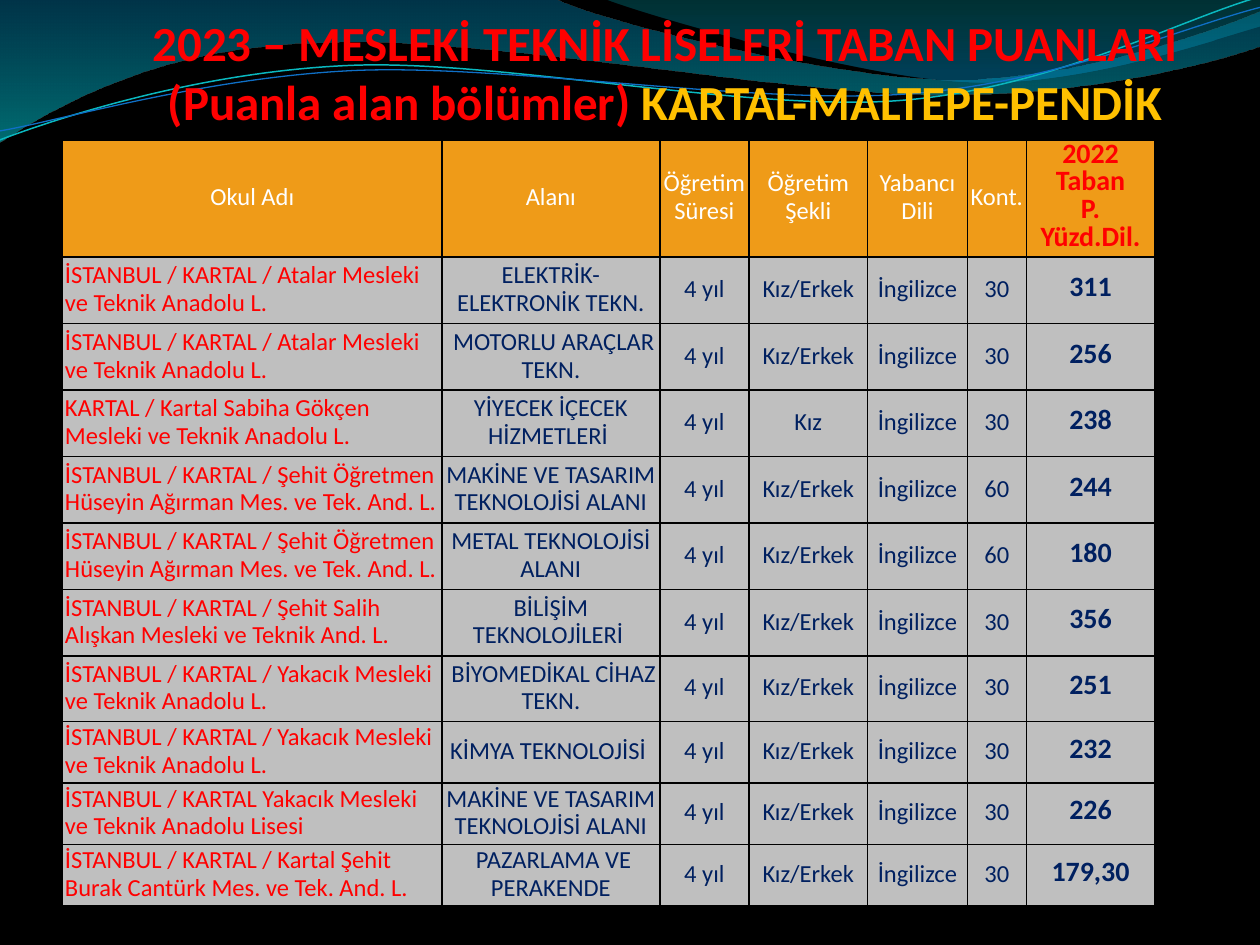
from dataclasses import dataclass
from typing import NamedTuple

from lxml import etree
from pptx import Presentation
from pptx import util as u
from pptx.dml.color import RGBColor
from pptx.enum import text as t
from pptx.oxml import ns

Cm, Pt = u.Cm, u.Pt
LEFT, MID = t.PP_ALIGN.LEFT, t.PP_ALIGN.CENTER


@dataclass(frozen=True)
class Theme:
    font: str = "Calibri"
    back: str = "000000"
    red: str = "FF0000"
    gold: str = "FFC000"
    navy: str = "002060"
    white: str = "FFFFFF"
    head: str = "EF9B18"
    body: str = "BFBFBF"
    title: int = 28
    cell: int = 14
    score: int = 16
    lead: float = 15.9


class Stop(NamedTuple):
    pos: float
    color: str
    alpha: int


class Wave(NamedTuple):
    """Steps in cm: two numbers are a line, six are a curve."""
    start: tuple
    steps: list
    stops: tuple = ()
    line: str = ""
    width: float = 0


class Row(NamedTuple):
    school: str
    field: str
    score: str
    quota: str = "30"
    kind: str = "Kız/Erkek"


class Style(NamedTuple):
    color: str
    size: int
    bold: bool = False


TH = Theme()
WAVES = [
    Wave((0, -0.03), [
        (11.18, -0.03), (12.09, 0.43, 16.87, 1.6, 19.25, 1.6),
        (21.67, 1.6, 24.33, 0.66, 25.4, 0.23), (25.43, 0.91),
        (24.97, 1.12, 22.1, 1.93, 18.95, 1.91),
        (15.8, 1.91, 9.7, 0.71, 6.53, 0.86),
        (3.28, 0.89, 1.17, 2.11, -0.03, 2.87), (0, -0.03)],
        (Stop(0, "0074A1", 45), Stop(1, "00C6CF", 55))),
    Wave((12.17, -0.03), [
        (12.93, 0.28, 17.32, 1.57, 19.53, 1.65),
        (21.74, 1.75, 24.41, 0.81, 25.4, 0.53), (25.4, 0), (12.17, -0.03)],
        (Stop(0, "00A1A9", 30), Stop(0.8, "008BBF", 45))),
    Wave((0, 2.82), [
        (1.22, 2.36, 4.01, 1.45, 7.04, 1.32),
        (10.03, 1.19, 15.06, 2.26, 18.11, 2.03),
        (21.16, 1.8, 23.83, 0.38, 25.35, -0.05)], line="0AB8BF", width=0.85),
    Wave((0, 2.64), [
        (1.19, 2.44, 4.17, 1.55, 7.19, 1.42),
        (10.24, 1.3, 15.16, 2.11, 18.21, 1.9),
        (21.23, 1.7, 23.9, 0.53, 25.4, 0.15)], line="0F6FC6", width=0.75),
]
COLS = [7.65, 4.39, 1.8, 2.39, 2.01, 1.19, 2.59]
HIGHS = [2.36] + [1.34] * 6 + [1.32] + [1.24] * 3
HEADS = ["Okul Adı", "Alanı", "Öğretim Süresi", "Öğretim Şekli",
         "Yabancı Dili", "Kont."]
BASE = "2022\vTaban\vP.\vYüzd.Dil."
ATALAR = "İSTANBUL / KARTAL / Atalar Mesleki ve Teknik Anadolu L."
HUSEYIN = ("İSTANBUL / KARTAL / Şehit Öğretmen Hüseyin Ağırman "
           "Mes. ve Tek. And. L.")
YAKACIK = "İSTANBUL / KARTAL / Yakacık Mesleki ve Teknik Anadolu L."
MAKINE = "MAKİNE VE TASARIM TEKNOLOJİSİ ALANI"
ROWS = [
    Row(ATALAR, "ELEKTRİK-ELEKTRONİK TEKN.", "311"),
    Row(ATALAR, " MOTORLU ARAÇLAR TEKN.", "256"),
    Row("KARTAL / Kartal Sabiha Gökçen Mesleki ve Teknik Anadolu L.",
        "YİYECEK İÇECEK HİZMETLERİ ", "238", kind="Kız"),
    Row(HUSEYIN, MAKINE, "244", "60"),
    Row(HUSEYIN, "METAL TEKNOLOJİSİ ALANI", "180", "60"),
    Row("İSTANBUL / KARTAL / Şehit Salih Alışkan Mesleki ve Teknik And. L.",
        "BİLİŞİM TEKNOLOJİLERİ ", "356"),
    Row(YAKACIK, " BİYOMEDİKAL CİHAZ TEKN.", "251"),
    Row(YAKACIK, "KİMYA TEKNOLOJİSİ ", "232"),
    Row("İSTANBUL / KARTAL Yakacık Mesleki ve Teknik Anadolu Lisesi",
        MAKINE, "226"),
    Row("İSTANBUL / KARTAL / Kartal Şehit Burak Cantürk Mes. ve Tek. And. L.",
        " PAZARLAMA VE PERAKENDE", "179,30"),
]


def rgb(code: str) -> RGBColor:
    return RGBColor.from_string(code)


def bend(shape, steps: list) -> None:
    """Join each three line segments of a curved step into one Bézier."""
    lines = iter(list(shape._element.spPr.iter(ns.qn("a:lnTo"))))
    for step in steps:
        first = next(lines)
        if len(step) == 2:
            continue
        curve = etree.Element(ns.qn("a:cubicBezTo"))
        first.addprevious(curve)
        for seg in (first, next(lines), next(lines)):
            curve.append(seg[0])
            seg.getparent().remove(seg)


def draw_wave(slide, wave: Wave) -> None:
    pen = slide.shapes.build_freeform(*map(Cm, wave.start))
    pts = [(Cm(step[i]), Cm(step[i + 1]))
           for step in wave.steps for i in range(0, len(step), 2)]
    pen.add_line_segments(pts, close=bool(wave.stops))
    shape = pen.convert_to_shape()
    bend(shape, wave.steps)
    shape.shadow.inherit = False
    if not wave.stops:
        shape.fill.background()
        shape.line.color.rgb = rgb(wave.line)
        shape.line.width = Pt(wave.width)
        return
    shape.line.fill.background()
    shape.fill.gradient()
    shape.fill.gradient_angle = 270
    for slot, stop in zip(shape.fill.gradient_stops, wave.stops):
        slot.position = stop.pos
        slot.color.rgb = rgb(stop.color)
    marks = shape._element.spPr.iter(ns.qn("a:srgbClr"))
    for mark, stop in zip(list(marks), wave.stops):
        etree.SubElement(mark, ns.qn("a:alpha"), val=str(stop.alpha * 1000))


def draw_title(slide) -> None:
    box = slide.shapes.add_textbox(Cm(1.9), Cm(0.13), Cm(23.01), Cm(2.64))
    frame = box.text_frame
    frame.word_wrap = True
    lines = [
        [("2023 – MESLEKİ TEKNİK LİSELERİ TABAN PUANLARI", TH.red)],
        [("(Puanla alan bölümler) ", TH.red), ("KARTAL-MALTEPE-PENDİK", TH.gold)],
    ]
    for i, line in enumerate(lines):
        para = frame.add_paragraph() if i else frame.paragraphs[0]
        para.alignment = MID
        para.font.name, para.font.size, para.font.bold = TH.font, Pt(TH.title), True
        for words, color in line:
            run = para.add_run()
            run.text = words
            run.font.color.rgb = rgb(color)


def edge(cell) -> None:
    """Put a black one-point border on all four sides."""
    props = cell._tc.get_or_add_tcPr()
    for i, side in enumerate("LRTB"):
        line = etree.Element(ns.qn(f"a:ln{side}"), w=str(Pt(1)))
        fill = etree.SubElement(line, ns.qn("a:solidFill"))
        etree.SubElement(fill, ns.qn("a:srgbClr"), val=TH.back)
        props.insert(i, line)


def fill_cell(cell, words: str, style: Style, back: str, align=MID) -> None:
    cell.fill.solid()
    cell.fill.fore_color.rgb = rgb(back)
    edge(cell)
    cell.vertical_anchor = t.MSO_ANCHOR.MIDDLE
    cell.margin_left = cell.margin_right = Cm(0.05)
    cell.margin_top = cell.margin_bottom = Cm(0.05)
    para = cell.text_frame.paragraphs[0]
    para.text, para.alignment = words, align
    para.line_spacing = Pt(TH.lead)
    font = para.font
    font.name, font.size, font.bold = TH.font, Pt(style.size), style.bold
    font.color.rgb = rgb(style.color)


def draw_table(slide) -> None:
    table = slide.shapes.add_table(
        len(HIGHS), len(COLS), Cm(1.26), Cm(2.82),
        Cm(sum(COLS)), Cm(sum(HIGHS))).table
    table.first_row = table.horz_banding = False
    for col, wide in zip(table.columns, COLS):
        col.width = Cm(wide)
    for row, high in zip(table.rows, HIGHS):
        row.height = Cm(high)
    for c, head in enumerate(HEADS):
        fill_cell(table.cell(0, c), head, Style(TH.white, TH.cell), TH.head)
    fill_cell(table.cell(0, len(HEADS)), BASE, Style(TH.red, TH.score, True), TH.head)
    plain = Style(TH.navy, TH.cell)
    styles = [Style(TH.red, TH.cell)] + [plain] * 5 + [Style(TH.navy, TH.score, True)]
    for r, row in enumerate(ROWS, 1):
        words = [row.school, row.field, "4 yıl", row.kind, "İngilizce",
                 row.quota, row.score]
        for c, (word, style) in enumerate(zip(words, styles)):
            fill_cell(table.cell(r, c), word, style, TH.body, MID if c else LEFT)


def main() -> None:
    deck = Presentation()
    deck.slide_width, deck.slide_height = Cm(25.4), Cm(19.05)
    slide = deck.slides.add_slide(deck.slide_layouts[6])
    slide.background.fill.solid()
    slide.background.fill.fore_color.rgb = rgb(TH.back)
    for wave in WAVES:
        draw_wave(slide, wave)
    draw_title(slide)
    draw_table(slide)
    deck.save("out.pptx")


if __name__ == "__main__":
    main()
